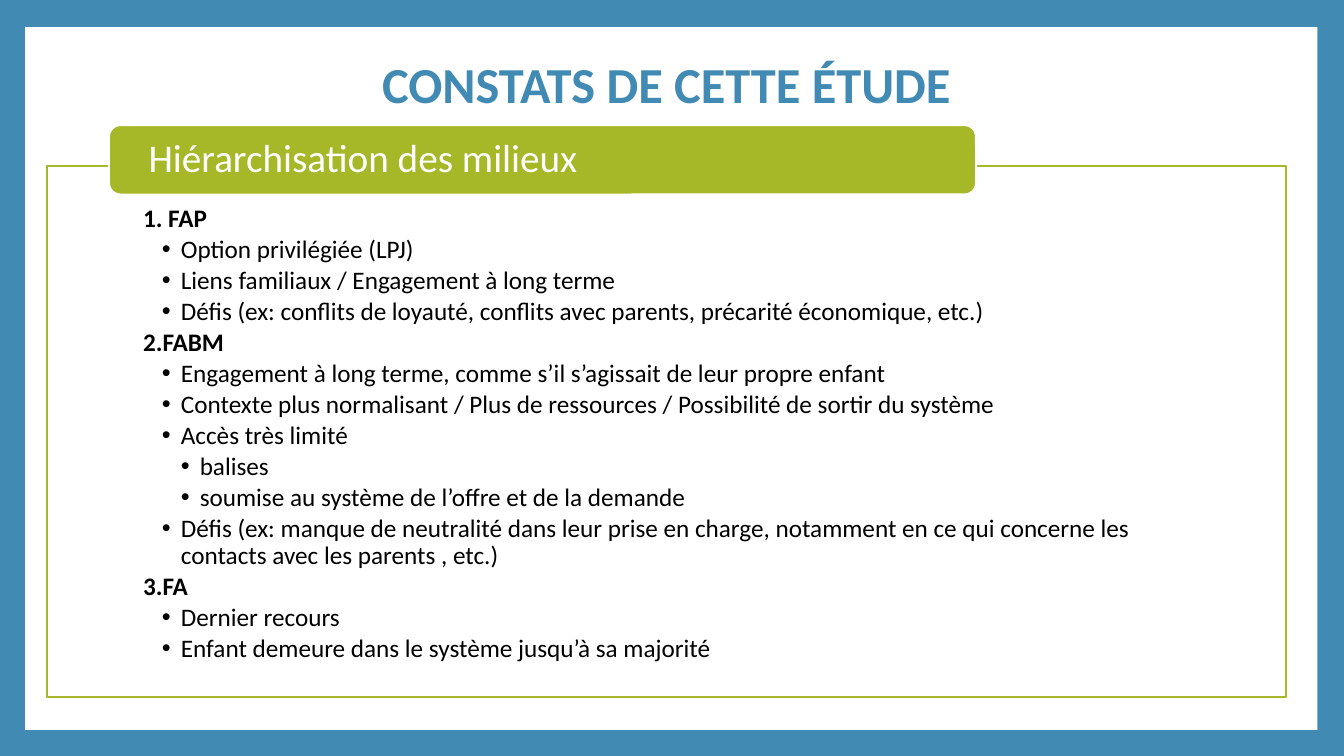
"""Build the slide on the ranking of care settings."""
from lxml.etree import SubElement
from pptx import Presentation
from pptx.dml.color import RGBColor
from pptx.enum.shapes import MSO_SHAPE
from pptx.enum.text import MSO_ANCHOR, PP_ALIGN
from pptx.oxml.ns import qn
from pptx.util import Pt

BLUE = RGBColor(0x41, 0x8A, 0xB3)
GREEN = RGBColor(0xA6, 0xB7, 0x27)
WHITE = RGBColor(0xFF, 0xFF, 0xFF)
BLACK = RGBColor(0x00, 0x00, 0x00)
FONT = "Calibri"
INDENT = 13.5

FINDINGS = [
    (1, " FAP"),
    (2, "Option privilégiée (LPJ)"),
    (2, "Liens familiaux / Engagement à long terme"),
    (2, "Défis (ex: conflits de loyauté, conflits avec parents, précarité économique, etc.)"),
    (1, "FABM"),
    (2, "Engagement à long terme, comme s’il s’agissait de leur propre enfant"),
    (2, "Contexte plus normalisant / Plus de ressources / Possibilité de sortir du système"),
    (2, "Accès très limité"),
    (3, "balises"),
    (3, "soumise au système de l’offre et de la demande"),
    (2, "Défis (ex: manque de neutralité dans leur prise en charge, notamment "
        "en ce qui concerne les contacts avec les parents , etc.)"),
    (1, "FA"),
    (2, "Dernier recours"),
    (2, "Enfant demeure dans le système jusqu’à sa majorité"),
]


def add_panel(page, kind, box, fill, line=None):
    """Add a filled shape, outlined if a line colour is given."""
    panel = page.shapes.add_shape(kind, *map(Pt, box))
    panel.shadow.inherit = False
    panel.fill.solid()
    panel.fill.fore_color.rgb = fill
    if line is None:
        panel.line.fill.background()
    else:
        panel.line.color.rgb = line
        panel.line.width = Pt(1.5)
    return panel


def set_frame(frame, anchor, insets):
    """Wrap the text and set its anchor and its left, top, right, bottom insets."""
    frame.word_wrap = True
    frame.vertical_anchor = anchor
    (frame.margin_left, frame.margin_top,
     frame.margin_right, frame.margin_bottom) = map(Pt, insets)


def style_para(para, size, color, bold=False, align=PP_ALIGN.LEFT):
    """Format a paragraph and its runs."""
    para.alignment = align
    para.line_spacing = 0.9
    for span in para.runs:
        span.font.name = FONT
        span.font.size = Pt(size)
        span.font.bold = bold
        span.font.color.rgb = color


def set_bullet(para, level):
    """Number the first level and put a dot before the deeper ones."""
    para.level = level
    properties = para._p.get_or_add_pPr()
    properties.set("marL", str(Pt(INDENT * level)))
    properties.set("indent", str(-Pt(INDENT)))
    if level == 1:
        SubElement(properties, qn("a:buFont"), typeface="+mj-lt")
        SubElement(properties, qn("a:buAutoNum"), type="arabicPeriod")
    else:
        SubElement(properties, qn("a:buFont"), typeface="Arial")
        SubElement(properties, qn("a:buChar"), char="•")


def add_title(page, box):
    """Add the centred slide title."""
    frame = page.shapes.add_textbox(*map(Pt, box)).text_frame
    set_frame(frame, MSO_ANCHOR.MIDDLE, (7.2, 3.6, 7.2, 3.6))
    frame.text = "CONSTATS DE CETTE ÉTUDE "
    style_para(frame.paragraphs[0], 36, BLUE, True, PP_ALIGN.CENTER)


def add_findings(page, box):
    """Add the outlined list with its heading tab across the top edge."""
    left, top, width, height = box
    panel = add_panel(page, MSO_SHAPE.RECTANGLE, box, WHITE, GREEN)
    frame = panel.text_frame
    set_frame(frame, MSO_ANCHOR.TOP, (68.4, 28.1, 68.4, 10.1))
    frame.text = "\n".join(text for level, text in FINDINGS)
    for para, (level, text) in zip(frame.paragraphs, FINDINGS):
        style_para(para, 18, BLACK, level == 1)
        para.space_after = Pt(2.7)
        set_bullet(para, level)

    tab_box = (left + 44, top - 29.5, width * 0.7, 49.7)
    tab = add_panel(page, MSO_SHAPE.ROUNDED_RECTANGLE, tab_box, GREEN, WHITE)
    set_frame(tab.text_frame, MSO_ANCHOR.MIDDLE, (25.9, 2.2, 25.9, 2.2))
    tab.text_frame.text = "Hiérarchisation des milieux"
    style_para(tab.text_frame.paragraphs[0], 28, WHITE)


def main():
    """Build and save the deck."""
    deck = Presentation()
    deck.slide_width, deck.slide_height = Pt(960), Pt(540)
    page = deck.slides.add_slide(deck.slide_layouts[6])
    page.background.fill.solid()
    page.background.fill.fore_color.rgb = BLUE
    add_panel(page, MSO_SHAPE.RECTANGLE, (18, 19.4, 923, 502), WHITE)
    add_title(page, (188.6, 25.2, 583.2, 74.9))
    add_findings(page, (33.8, 118.8, 884.9, 379.4))
    deck.save("out.pptx")


if __name__ == "__main__":
    main()
